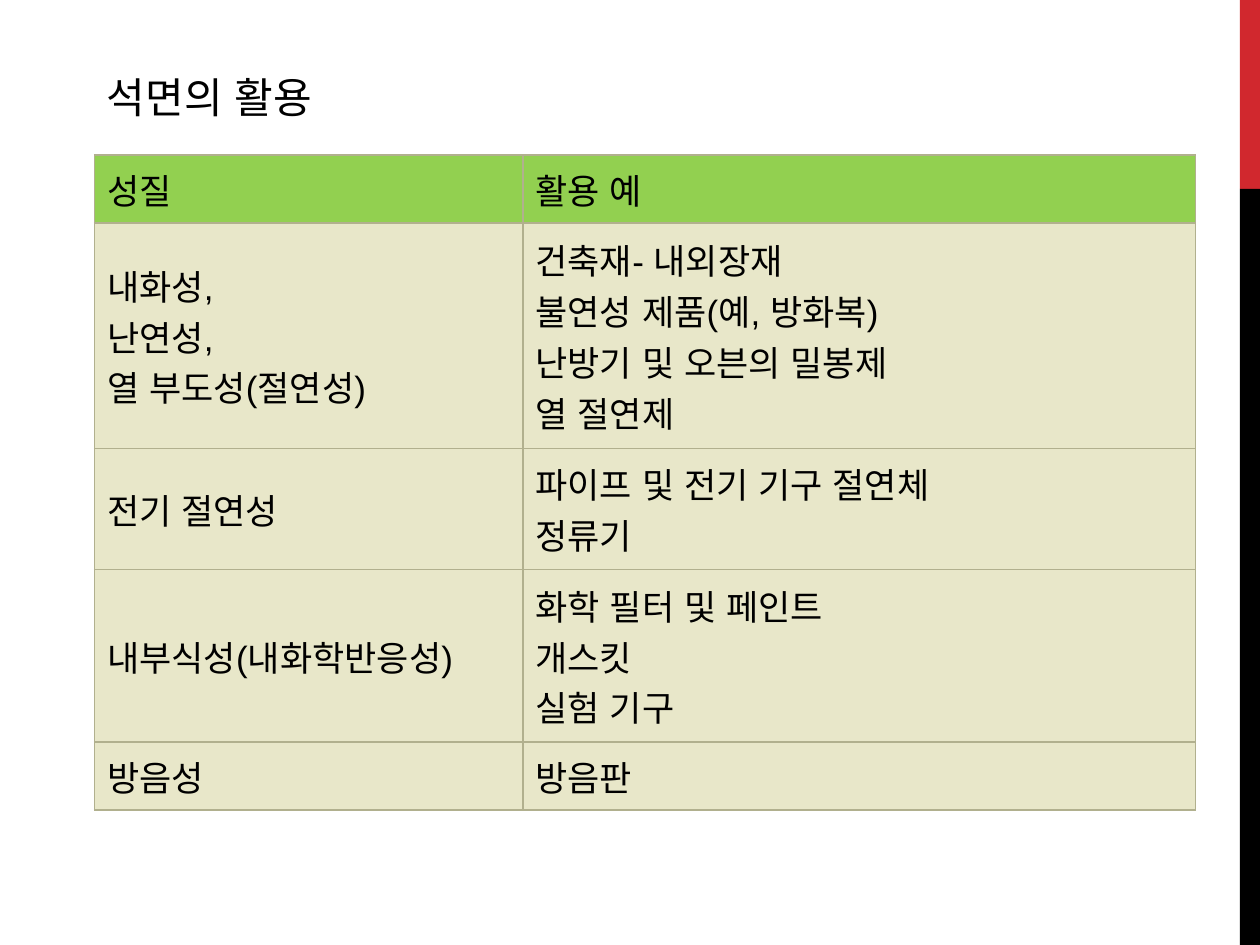
"""Build a slide with a table of asbestos properties and their uses."""
from lxml import etree
from pptx import Presentation
from pptx import util as u
from pptx.dml.color import RGBColor
from pptx.enum import lang, shapes, text
from pptx.oxml import ns

COLORS = {"red": "D1282E", "black": "000000", "header": "92D050", "body": "E8E7C9", "border": "B1B08E"}
LATIN, KOREAN = "Arial", "Noto Sans CJK KR"
JUSTIFY, LEFT = text.PP_ALIGN.JUSTIFY, text.PP_ALIGN.LEFT


def write_lines(frame, lines, size, font_name, align):
    frame.text = "\n".join(lines)
    for paragraph in frame.paragraphs:
        paragraph.alignment = align
        run = paragraph.runs[0]
        formats = {"size": u.Pt(size), "name": font_name, "bold": False,
                   "language_id": lang.MSO_LANGUAGE_ID.KOREAN}
        for key, value in formats.items():
            setattr(run.font, key, value)
        run.font.color.rgb = RGBColor.from_string(COLORS["black"])
        etree.SubElement(run.font._element, ns.qn("a:ea"), typeface=KOREAN)


def add_borders(cell):
    properties = cell._tc.get_or_add_tcPr()
    for index, side in enumerate(("lnL", "lnR", "lnT", "lnB")):
        edge = etree.Element(ns.qn(f"a:{side}"), w=str(u.Pt(1)))
        fill = etree.SubElement(edge, ns.qn("a:solidFill"))
        etree.SubElement(fill, ns.qn("a:srgbClr"), val=COLORS["border"])
        properties.insert(index, edge)


deck = Presentation()
deck.slide_width, deck.slide_height = u.Inches(10), u.Inches(7.5)
slide = deck.slides.add_slide(deck.slide_layouts[6])

for top, height, color in ((0, 1.5, "red"), (1.5, 6, "black")):
    band = slide.shapes.add_shape(shapes.MSO_SHAPE.RECTANGLE, u.Inches(9.84), u.Inches(top),
                                  u.Inches(0.16), u.Inches(height))
    band.shadow.inherit = False
    band.fill.solid()
    band.fill.fore_color.rgb = RGBColor.from_string(COLORS[color])
    band.line.fill.background()

rows = [
    (0.54, ["성질"], ["활용 예"]),
    (1.79, ["내화성,", "난연성,", "열 부도성(절연성)"],
     ["건축재- 내외장재", "불연성 제품(예, 방화복)", "난방기 및 오븐의 밀봉제", "열 절연제"]),
    (0.96, ["전기 절연성"], ["파이프 및 전기 기구 절연체", "정류기"]),
    (1.37, ["내부식성(내화학반응성)"], ["화학 필터 및 페인트", "개스킷", "실험 기구"]),
    (0.54, ["방음성"], ["방음판"]),
]
uses = slide.shapes.add_table(len(rows), 2, u.Inches(0.75), u.Inches(1.23),
                              u.Inches(8.74), u.Inches(5.2)).table
uses.first_row = uses.horz_banding = False
for column, width in zip(uses.columns, (3.4, 5.34)):
    column.width = u.Inches(width)
for row_index, (height, *contents) in enumerate(rows):
    uses.rows[row_index].height = u.Inches(height)
    for column_index, lines in enumerate(contents):
        cell = uses.cell(row_index, column_index)
        cell.vertical_anchor = text.MSO_ANCHOR.MIDDLE
        cell.fill.solid()
        cell.fill.fore_color.rgb = RGBColor.from_string(COLORS["body" if row_index else "header"])
        add_borders(cell)
        align = LEFT if row_index and not column_index else JUSTIFY
        write_lines(cell.text_frame, lines, 20, LATIN, align)
uses.cell(1, 1).text_frame.paragraphs[1].alignment = LEFT

heading = slide.shapes.add_textbox(u.Inches(0.75), u.Inches(0.52), u.Inches(2), u.Inches(0.5)).text_frame
write_lines(heading, ["석면의 활용"], 24, KOREAN, LEFT)
for key, value in {"word_wrap": False, "auto_size": text.MSO_AUTO_SIZE.SHAPE_TO_FIT_TEXT}.items():
    setattr(heading, key, value)

deck.save("out.pptx")
